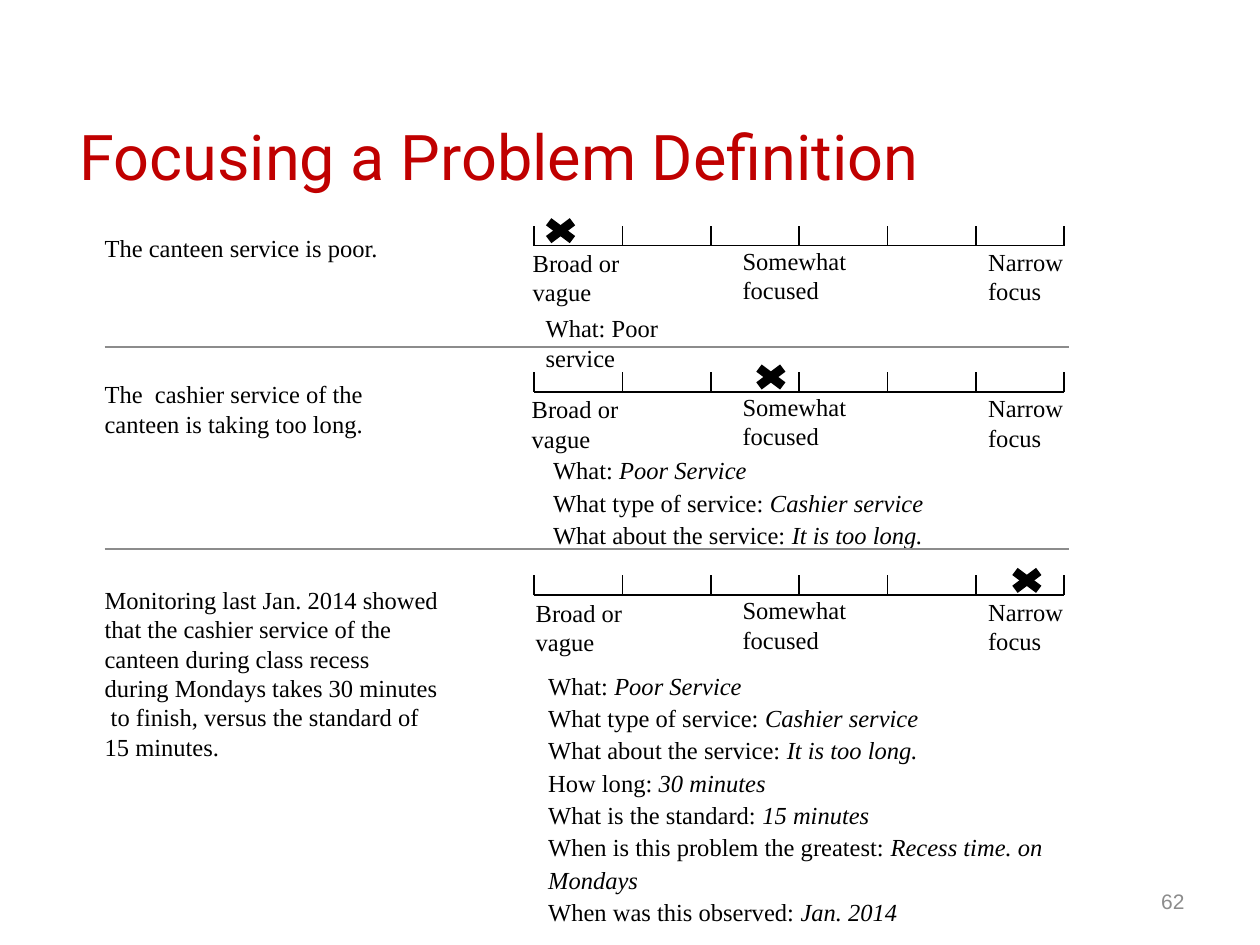
from dataclasses import dataclass

from lxml.etree import SubElement
from pptx import Presentation
from pptx.dml.color import RGBColor
from pptx.enum.shapes import MSO_CONNECTOR as Connector
from pptx.enum.text import MSO_ANCHOR as Anchor, MSO_AUTO_SIZE as AutoSize, PP_ALIGN as Align
from pptx.oxml.ns import qn
from pptx.util import Cm, Pt

COLORS = {"title": "C00000", "ink": "000000", "gray": "8C8C8C"}
SERIF = "Times New Roman"
SCALE_LEFT, TICK_STEP, TICK_COUNT, TICK_HEIGHT = 10.77, 1.78, 7, 0.4
CROSS_WIDTH, CROSS_HEIGHT, CROSS_RISE = 0.48, 0.36, 0.48


@dataclass
class Stage:
    statement: str
    statement_box: tuple[float, float, float, float]
    scale_top: float
    broad_left: float
    cross_left: float
    details: list[tuple[str, str]]
    details_box: tuple[float, float, float, float]
    line_spacing: float = 1.1


SERVICE_DETAILS = [
    ("What: ", "Poor Service"),
    ("What type of service: ", "Cashier service"),
    ("What about the service: ", "It is too long."),
]
STAGES = [
    Stage("The canteen service is poor.", (2.11, 4.7, 6.2, 0.6), 4.95, 10.74, 11.06,
          [("What: Poor service", "")], (11, 6.32, 3.7, 0.6), 1.0),
    Stage("The  cashier service of the canteen is taking too long.",
          (2.11, 7.65, 6.27, 1.2), 7.9, 10.72, 15.3,
          SERVICE_DETAILS, (11.15, 9.12, 7.87, 1.98)),
    Stage("Monitoring last Jan. 2014 showed that the cashier service of the canteen "
          "during class recess  during Mondays takes 30 minutes  to finish, "
          "versus the standard of 15 minutes.",
          (2.11, 11.79, 6.76, 3.58), 12, 10.8, 20.46,
          SERVICE_DETAILS + [
              ("How long: ", "30 minutes"),
              ("What is the standard: ", "15 minutes"),
              ("When is this problem the greatest: ", "Recess time. on Mondays"),
              ("When was this observed: ", "Jan. 2014"),
          ], (11.05, 13.46, 10.62, 5.26)),
]


def format_font(font, *, size: float = 14, name: str = SERIF, color: str = "ink",
                italic: bool = False) -> None:
    font.size = Pt(size)
    font.name = name
    font.italic = italic
    font.color.rgb = RGBColor.from_string(COLORS[color])


def add_text(slide, lines: list[tuple[str, str]], box: tuple[float, float, float, float], *,
             line_spacing: float = 1.0, align=Align.LEFT, anchor=Anchor.TOP,
             size: float = 14, name: str = SERIF, color: str = "ink") -> None:
    frame = slide.shapes.add_textbox(*(Cm(length) for length in box)).text_frame
    frame.word_wrap = True
    frame.auto_size = AutoSize.NONE
    frame.vertical_anchor = anchor
    frame.margin_left = frame.margin_right = frame.margin_top = frame.margin_bottom = 0
    for index, parts in enumerate(lines):
        paragraph = frame.add_paragraph() if index else frame.paragraphs[0]
        paragraph.alignment = align
        paragraph.line_spacing = line_spacing
        for text, italic in zip(parts, (False, True)):
            if text:
                run = paragraph.add_run()
                run.text = text
                format_font(run.font, size=size, name=name, color=color, italic=italic)


def add_line(shapes, left: float, top: float, right: float, bottom: float, *,
             width: float = 1, color: str = "ink") -> None:
    line = shapes.add_connector(Connector.STRAIGHT, Cm(left), Cm(top), Cm(right), Cm(bottom))
    line.line.width = Pt(width)
    line.line.color.rgb = RGBColor.from_string(COLORS[color])
    SubElement(line._element.spPr, qn("a:effectLst"))


def add_scale(slide, stage: Stage) -> None:
    top = stage.scale_top
    shapes = slide.shapes.add_group_shape().shapes
    add_line(shapes, SCALE_LEFT, top, SCALE_LEFT + TICK_STEP * (TICK_COUNT - 1), top)
    for index in range(TICK_COUNT):
        tick = SCALE_LEFT + TICK_STEP * index
        add_line(shapes, tick, top, tick, top - TICK_HEIGHT)
    labels = [
        ("Broad or vague", stage.broad_left, 0.05, 2.03),
        ("Somewhat focused", 14.97, 0, 2.34),
        ("Narrow focus", 19.92, 0.03, 1.95),
    ]
    for text, left, offset, width in labels:
        add_text(slide, [(text, "")], (left, top + offset, width, 1.2))


def add_cross(slide, left: float, top: float) -> None:
    shapes = slide.shapes.add_group_shape().shapes
    right, bottom = left + CROSS_WIDTH, top + CROSS_HEIGHT
    add_line(shapes, left, top, right, bottom, width=5.13)
    add_line(shapes, left, bottom, right, top, width=5.13)


def add_title(slide, text: str) -> None:
    title = slide.shapes.title
    title.left, title.top, title.width, title.height = Cm(1.35), Cm(1.85), Cm(22.96), Cm(2.57)
    title.text_frame.text = text
    title.text_frame.vertical_anchor = Anchor.MIDDLE
    paragraph = title.text_frame.paragraphs[0]
    paragraph.alignment = Align.LEFT
    format_font(paragraph.runs[0].font, size=36, name="Roboto", color="title")


def main() -> None:
    presentation = Presentation()
    presentation.slide_width, presentation.slide_height = Cm(25.4), Cm(19.05)
    slide = presentation.slides.add_slide(presentation.slide_layouts[5])
    add_title(slide, "Focusing a Problem Definition")
    for stage in STAGES:
        add_text(slide, [(stage.statement, "")], stage.statement_box)
        add_scale(slide, stage)
        add_cross(slide, stage.cross_left, stage.scale_top - CROSS_RISE)
        add_text(slide, stage.details, stage.details_box, line_spacing=stage.line_spacing)
    for top in (7, 11.07):
        add_line(slide.shapes, 2.11, top, 21.54, top, color="gray")
    add_text(slide, [("62", "")], (18.21, 17.65, 5.67, 1.02), align=Align.RIGHT,
             anchor=Anchor.MIDDLE, size=12, name="Arial", color="gray")
    presentation.save("out.pptx")


if __name__ == "__main__":
    main()
